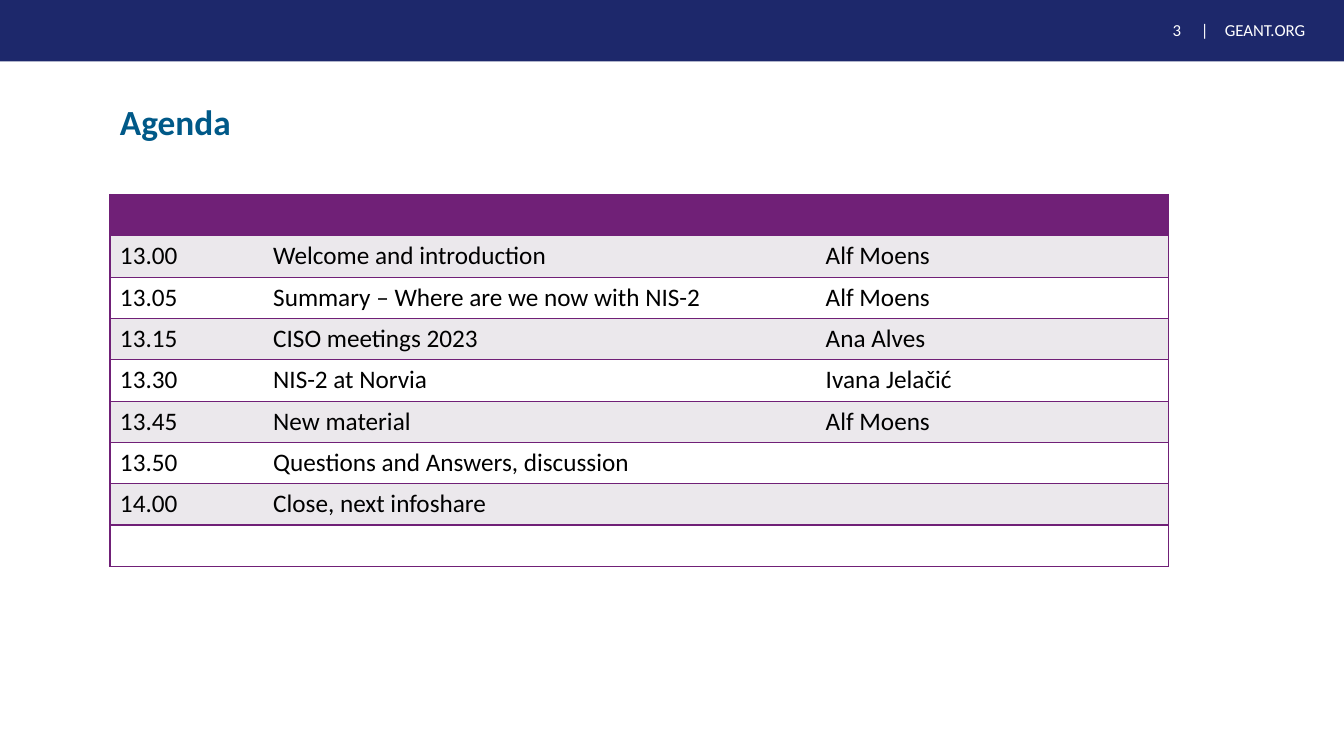
from pptx import Presentation
from pptx import util as u
from pptx.dml.color import RGBColor
from pptx.enum import shapes, text
from pptx.oxml import parse_xml
from pptx.oxml.ns import nsdecls

# Content
TITLE = "Agenda"
PAGE = "3\t|"
SITE = "GEANT.ORG"
AGENDA = [
    ("", "", ""),
    ("13.00", "Welcome and introduction", "Alf Moens"),
    ("13.05", "Summary – Where are we now with NIS-2", "Alf Moens"),
    ("13.15", "CISO meetings 2023", "Ana Alves"),
    ("13.30", "NIS-2 at Norvia", "Ivana Jelačić"),
    ("13.45", "New material", "Alf Moens"),
    ("13.50", "Questions and Answers, discussion", ""),
    ("14.00", "Close, next infoshare", ""),
    ("", "", ""),
]
COLS = (1.52, 5.48, 3.5)
ROW = 0.41
LEFT = 1.09


class Theme:
    font = "Calibri"
    navy, blue, plum = "1D286B", "005988", "702077"
    band, white, black = "EBE8EC", "FFFFFF", "000000"
    small, body, head = 12, 18, 25.2


def box(*spot):
    return [u.Inches(n) for n in spot]


def paint(fill, color):
    fill.solid()
    fill.fore_color.rgb = RGBColor.from_string(color)


def write(para, words, size, color, bold=False):
    run = para.add_run()
    run.text = words
    font = run.font
    font.name, font.size, font.bold = Theme.font, u.Pt(size), bold
    font.color.rgb = RGBColor.from_string(color)


def label(slide, spot):
    frame = slide.shapes.add_textbox(*box(*spot)).text_frame
    frame.word_wrap = True
    frame.vertical_anchor = text.MSO_ANCHOR.MIDDLE
    return frame


def border(cell, side, shown):
    ink = (f'<a:solidFill><a:srgbClr val="{Theme.plum}"/></a:solidFill>'
           if shown else "<a:noFill/>")
    cell._tc.get_or_add_tcPr().append(parse_xml(
        f'<a:ln{side} {nsdecls("a")} w="{u.Pt(1)}">{ink}</a:ln{side}>'))


def header(slide):
    bar = slide.shapes.add_shape(shapes.MSO_SHAPE.RECTANGLE,
                                 *box(0, -0.04, 13.33, 0.65))
    bar.shadow.inherit = False
    paint(bar.fill, Theme.navy)
    bar.line.fill.background()

    # Page number, with a tab stop before the divider
    page = label(slide, (11.36, 0.12, 0.73, 0.36))
    page.margin_left, page.margin_right = box(0.27, 0)
    para = page.paragraphs[0]
    para._p.get_or_add_pPr().append(parse_xml(
        f'<a:tabLst {nsdecls("a")}>'
        f'<a:tab pos="{u.Inches(0.28)}" algn="l"/></a:tabLst>'))
    write(para, PAGE, Theme.small, Theme.white)

    site = label(slide, (12.05, 0.15, 1.39, 0.32)).paragraphs[0]
    site.line_spacing = 0.9
    write(site, SITE, Theme.small, Theme.white)


def heading(slide):
    title = slide.shapes.title
    title.left, title.top, title.width, title.height = box(LEFT, 1, 10.82, 0.47)
    frame = title.text_frame
    frame.vertical_anchor = text.MSO_ANCHOR.MIDDLE
    para = frame.paragraphs[0]
    para.alignment = text.PP_ALIGN.LEFT
    para.line_spacing = 0.9
    write(para, TITLE, Theme.head, Theme.blue, True)


def agenda(slide):
    spot = box(LEFT, 1.93, sum(COLS), ROW * len(AGENDA))
    table = slide.shapes.add_table(len(AGENDA), len(COLS), *spot).table
    for col, wide in zip(table.columns, COLS):
        col.width = u.Inches(wide)
    for r, line in enumerate(AGENDA):
        table.rows[r].height = u.Inches(ROW)
        shade = (Theme.band if r % 2 else Theme.white) if r else Theme.plum
        for c, words in enumerate(line):
            cell = table.cell(r, c)
            edges = {"L": c == 0, "R": c == len(COLS) - 1, "T": True, "B": True}
            for side, shown in edges.items():
                border(cell, side, shown)
            paint(cell.fill, shade)
            para = cell.text_frame.paragraphs[0]
            if words:
                write(para, words, Theme.body, Theme.black)
            else:
                para.font.size = u.Pt(Theme.body)


def main():
    deck = Presentation()
    deck.slide_width, deck.slide_height = box(13.33, 7.5)
    slide = deck.slides.add_slide(deck.slide_layouts[5])
    header(slide)
    heading(slide)
    agenda(slide)
    deck.save("out.pptx")


if __name__ == "__main__":
    main()
